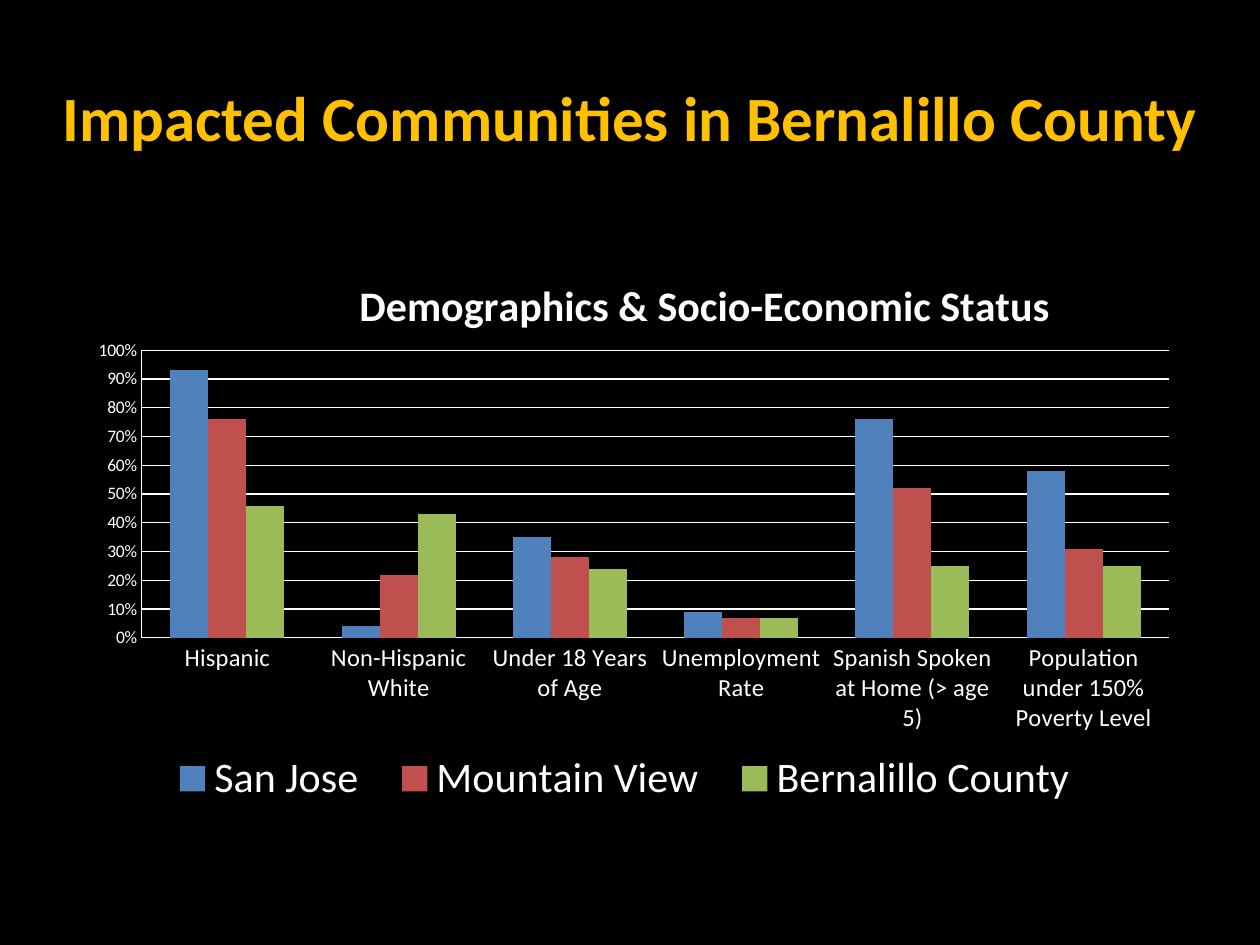
from dataclasses import dataclass

from lxml import etree
from pptx import Presentation
from pptx.chart.data import CategoryChartData
from pptx.dml.color import RGBColor
from pptx.enum import chart as kinds, text
from pptx.oxml import ns
from pptx.util import Pt


@dataclass(frozen=True)
class Theme:
    font: str = "Calibri"
    background: str = "000000"
    heading: str = "FFC000"
    ink: str = "FFFFFF"
    bars: tuple = ("4F81BD", "C0504D", "9BBB59")
    heading_size: int = 36
    chart_size: int = 24
    category_size: int = 14
    value_size: int = 10


THEME = Theme()

CATEGORIES = [
    "Hispanic",
    "Non-Hispanic White",
    "Under 18 Years of Age",
    "Unemployment Rate",
    "Spanish Spoken at Home (> age 5)",
    "Population under 150% Poverty Level",
]
COMMUNITIES = {
    "San Jose": (0.93, 0.04, 0.35, 0.09, 0.76, 0.58),
    "Mountain View": (0.76, 0.22, 0.28, 0.07, 0.52, 0.31),
    "Bernalillo County": (0.46, 0.43, 0.24, 0.07, 0.25, 0.25),
}


def set_font(font, size, color=THEME.ink, bold=False):
    font.name = THEME.font
    font.size = Pt(size)
    font.bold = bold
    font.color.rgb = RGBColor.from_string(color)


def write(para, words, **style):
    """Put formatted text in a paragraph."""
    span = para.add_run()
    span.text = words
    set_font(span.font, **style)


def set_layout(element, index, inner=False, **fractions):
    """Place a chart part by fractions of the chart's size."""
    for old in element.findall(ns.qn("c:layout")):
        element.remove(old)
    layout = etree.Element(ns.qn("c:layout"))
    manual = etree.SubElement(layout, ns.qn("c:manualLayout"))
    settings = {"layoutTarget": "inner"} if inner else {}
    settings |= {"xMode": "edge", "yMode": "edge"} | fractions
    for name, value in settings.items():
        etree.SubElement(manual, ns.qn(f"c:{name}")).set("val", str(value))
    element.insert(index, layout)


def add_heading(page, left, top, width, height):
    box = page.shapes.add_textbox(Pt(left), Pt(top), Pt(width), Pt(height))
    frame = box.text_frame
    frame.word_wrap = True
    frame.vertical_anchor = text.MSO_ANCHOR.MIDDLE
    para = frame.paragraphs[0]
    para.alignment = text.PP_ALIGN.CENTER
    write(para, "Impacted Communities in Bernalillo County",
          size=THEME.heading_size, color=THEME.heading, bold=True)


def style_axis(axis, size):
    axis.major_tick_mark = kinds.XL_TICK_MARK.NONE
    axis.minor_tick_mark = kinds.XL_TICK_MARK.NONE
    set_font(axis.tick_labels.font, size)
    lines = [axis.format.line]
    if axis.has_major_gridlines:
        lines.append(axis.major_gridlines.format.line)
    for line in lines:
        line.color.rgb = RGBColor.from_string(THEME.ink)
        line.width = Pt(0.75)


def add_demographics(page, left, top, width, height):
    data = CategoryChartData(number_format="0%")
    data.categories = CATEGORIES
    for name, shares in COMMUNITIES.items():
        data.add_series(name, shares)
    chart = page.shapes.add_chart(
        kinds.XL_CHART_TYPE.COLUMN_CLUSTERED,
        Pt(left), Pt(top), Pt(width), Pt(height), data).chart
    set_font(chart.font, THEME.value_size)

    # Title
    chart.has_title = True
    write(chart.chart_title.text_frame.paragraphs[0],
          "Demographics & Socio-Economic Status",
          size=THEME.chart_size, bold=True)
    set_layout(chart.chart_title._element, 1, x=0.27, y=0.09)

    # Axes
    values = chart.value_axis
    values.minimum_scale, values.maximum_scale, values.major_unit = 0, 1, 0.1
    values.has_major_gridlines = True
    values.tick_labels.number_format = "0%"
    values.tick_labels.number_format_is_linked = False
    style_axis(values, THEME.value_size)
    style_axis(chart.category_axis, THEME.category_size)

    # Columns
    plot = chart.plots[0]
    plot.vary_by_categories = False
    plot.gap_width = 150
    plot.overlap = 0
    for series, color in zip(plot.series, THEME.bars):
        series.format.fill.solid()
        series.format.fill.fore_color.rgb = RGBColor.from_string(color)
    plot_area = chart._chartSpace.find(".//" + ns.qn("c:plotArea"))
    set_layout(plot_area, 0, inner=True, x=0.093, y=0.212, w=0.866, h=0.435)

    # Legend
    chart.has_legend = True
    legend = chart.legend
    legend.position = kinds.XL_LEGEND_POSITION.RIGHT
    legend.include_in_layout = False
    set_font(legend.font, THEME.chart_size)
    set_layout(legend._element, 1, x=0.1, y=0.81, w=0.8, h=0.1)


def main():
    deck = Presentation()
    deck.slide_width, deck.slide_height = Pt(720), Pt(540)
    page = deck.slides.add_slide(deck.slide_layouts[6])
    page.background.fill.solid()
    page.background.fill.fore_color.rgb = RGBColor.from_string(THEME.background)
    add_heading(page, 24, 21.6, 672, 90)
    add_demographics(page, 18, 120, 678, 378)
    deck.save("out.pptx")


if __name__ == "__main__":
    main()
